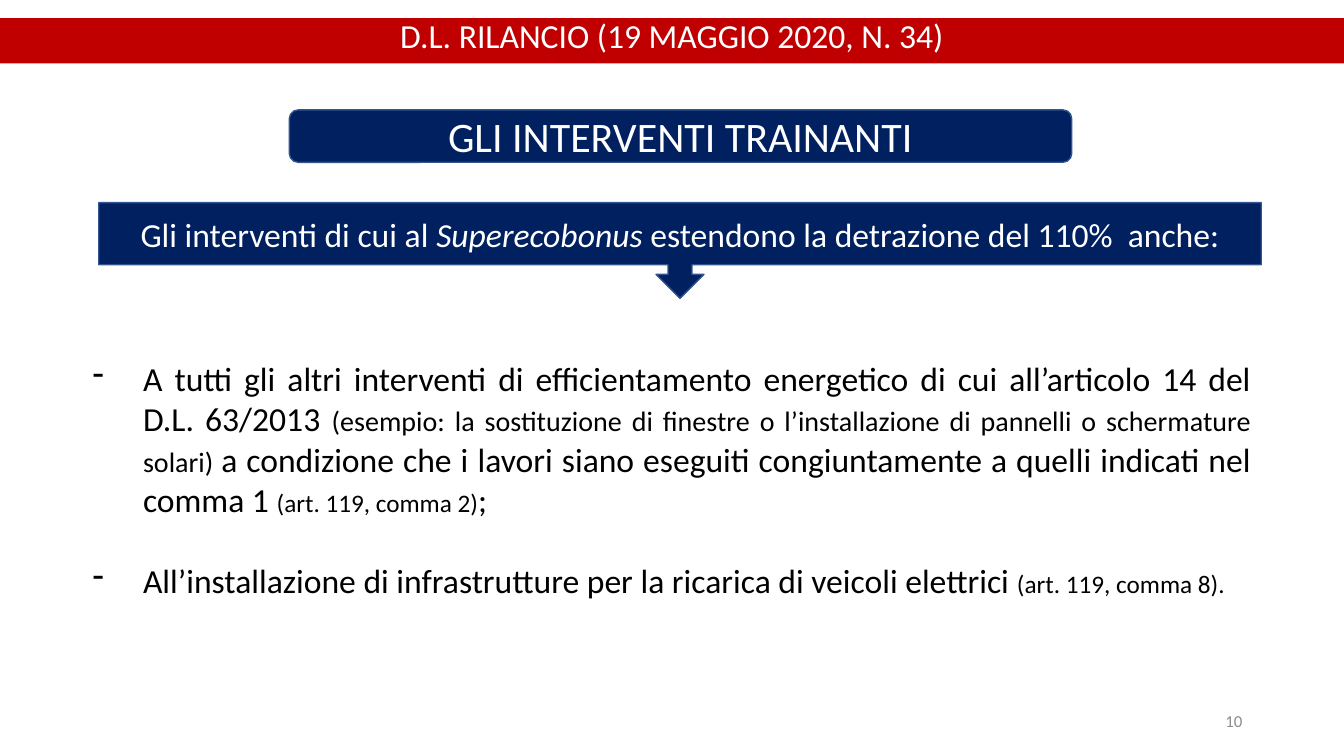
from dataclasses import dataclass

from lxml import etree
from pptx import Presentation
from pptx.dml.color import RGBColor
from pptx.enum.shapes import MSO_SHAPE
from pptx.enum.text import MSO_ANCHOR, MSO_AUTO_SIZE, PP_ALIGN
from pptx.oxml.ns import qn
from pptx.util import Emu, Pt

ROUNDED = MSO_SHAPE.ROUNDED_RECTANGLE
DOWN_CALLOUT = MSO_SHAPE.DOWN_ARROW_CALLOUT
TOP, MIDDLE = MSO_ANCHOR.TOP, MSO_ANCHOR.MIDDLE
NO_AUTOFIT = MSO_AUTO_SIZE.NONE
CENTER, RIGHT, JUSTIFY = PP_ALIGN.CENTER, PP_ALIGN.RIGHT, PP_ALIGN.JUSTIFY
EMU_PER_PX = 9144
TITLE_ONLY = 5


@dataclass(frozen=True)
class Theme:
    font: str = "Calibri"
    red: str = "C00000"
    navy: str = "002060"
    outline: str = "325491"
    white: str = "FFFFFF"
    black: str = "000000"
    grey: str = "8C8C8C"
    heading: int = 30
    body: int = 24
    example: int = 20
    citation: int = 18
    number: int = 12


THEME = Theme()


@dataclass(frozen=True)
class Box:
    left: int
    top: int
    width: int
    height: int

    def emu(self) -> list[Emu]:
        return [px(side) for side in (self.left, self.top, self.width, self.height)]


@dataclass(frozen=True)
class Span:
    text: str
    size: int = THEME.body
    italic: bool = False


@dataclass(frozen=True)
class Panel:
    kind: int
    box: Box
    spans: tuple[Span, ...]


def px(length: int) -> Emu:
    return Emu(length * EMU_PER_PX)


def color(value: str) -> RGBColor:
    return RGBColor.from_string(value)


def write(para, spans: tuple[Span, ...], ink: str, alignment) -> None:
    para.alignment = alignment
    for span in spans:
        run = para.add_run()
        run.text = span.text
        run.font.name = THEME.font
        run.font.size = Pt(span.size)
        run.font.italic = span.italic
        run.font.color.rgb = color(ink)


def add_dash(para) -> None:
    properties = para._p.get_or_add_pPr()
    properties.set("marL", str(px(50)))
    properties.set("indent", str(px(-50)))
    etree.SubElement(properties, qn("a:buChar")).set("char", "-")


def draw_title(page, box: Box, text: str) -> None:
    title = page.shapes.title
    title.left, title.top, title.width, title.height = box.emu()
    title.fill.solid()
    title.fill.fore_color.rgb = color(THEME.red)
    frame = title.text_frame
    frame.auto_size = NO_AUTOFIT
    frame.vertical_anchor = TOP
    para = frame.paragraphs[0]
    para.line_spacing = 0.8
    para.space_before = Pt(10)
    write(para, (Span(text),), THEME.white, CENTER)


def draw_panel(page, panel: Panel) -> None:
    shape = page.shapes.add_shape(panel.kind, *panel.box.emu())
    shape.shadow.inherit = False
    shape.fill.solid()
    shape.fill.fore_color.rgb = color(THEME.navy)
    shape.line.color.rgb = color(THEME.outline)
    shape.line.width = Pt(1)
    frame = shape.text_frame
    frame.word_wrap = True
    frame.vertical_anchor = MIDDLE
    write(frame.paragraphs[0], panel.spans, THEME.white, CENTER)


def add_text_frame(page, box: Box, anchor):
    frame = page.shapes.add_textbox(*box.emu()).text_frame
    frame.word_wrap = True
    frame.vertical_anchor = anchor
    return frame


def draw_list(page, box: Box, items: tuple[tuple[Span, ...], ...]) -> None:
    frame = add_text_frame(page, box, TOP)
    for index, spans in enumerate(items):
        para = frame.add_paragraph() if index else frame.paragraphs[0]
        if index:
            para.space_before = Pt(29)
        write(para, spans, THEME.black, JUSTIFY)
        add_dash(para)


def draw_page_number(page, box: Box, number: str) -> None:
    frame = add_text_frame(page, box, MIDDLE)
    write(frame.paragraphs[0], (Span(number, THEME.number),), THEME.grey, RIGHT)


PANELS = (
    Panel(DOWN_CALLOUT, Box(98, 201, 1153, 95), (
        Span("Gli interventi di cui al "),
        Span("Superecobonus", italic=True),
        Span(" estendono la detrazione del 110%  anche:"),
    )),
    Panel(ROUNDED, Box(287, 109, 776, 52), (
        Span("GLI INTERVENTI TRAINANTI", THEME.heading),
    )),
)

EXTENSIONS = (
    (
        Span("A tutti gli altri interventi di efficientamento energetico "
             "di cui all’articolo 14 del D.L. 63/2013 "),
        Span("(esempio: la sostituzione di finestre o l’installazione "
             "di pannelli o schermature solari) ", THEME.example),
        Span("a condizione che i lavori siano eseguiti congiuntamente "
             "a quelli indicati nel comma 1 "),
        Span("(art. 119, comma 2)", THEME.citation),
        Span(";"),
    ),
    (
        Span("All’installazione di infrastrutture per la ricarica di veicoli elettrici "),
        Span("(art. 119, comma 8).", THEME.citation),
    ),
)


def main() -> None:
    deck = Presentation()
    deck.slide_width, deck.slide_height = px(1333), px(750)
    page = deck.slides.add_slide(deck.slide_layouts[TITLE_ONLY])
    draw_title(page, Box(0, 18, 1333, 45), "D.L. RILANCIO (19 MAGGIO 2020, N. 34)")
    for panel in PANELS:
        draw_panel(page, panel)
    draw_list(page, Box(82, 350, 1169, 252), EXTENSIONS)
    draw_page_number(page, Box(942, 695, 300, 40), "10")
    deck.save("out.pptx")


if __name__ == "__main__":
    main()
